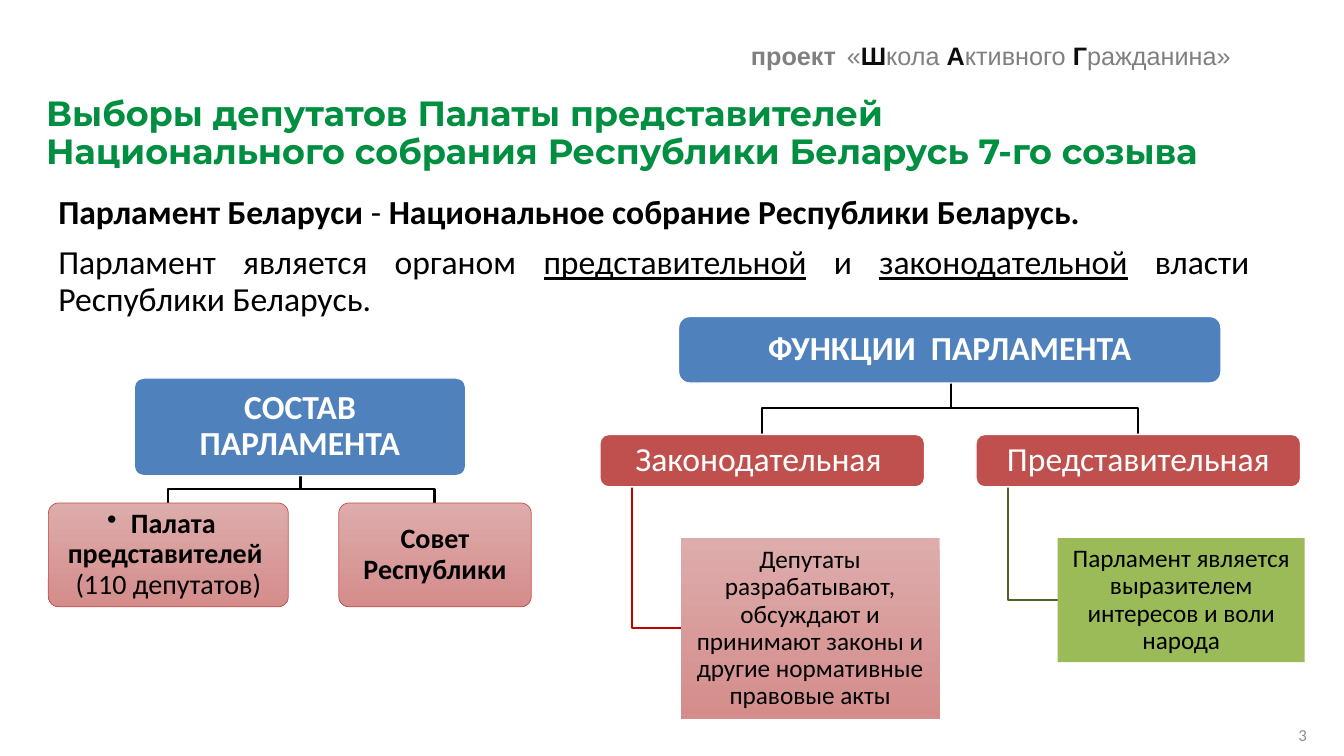
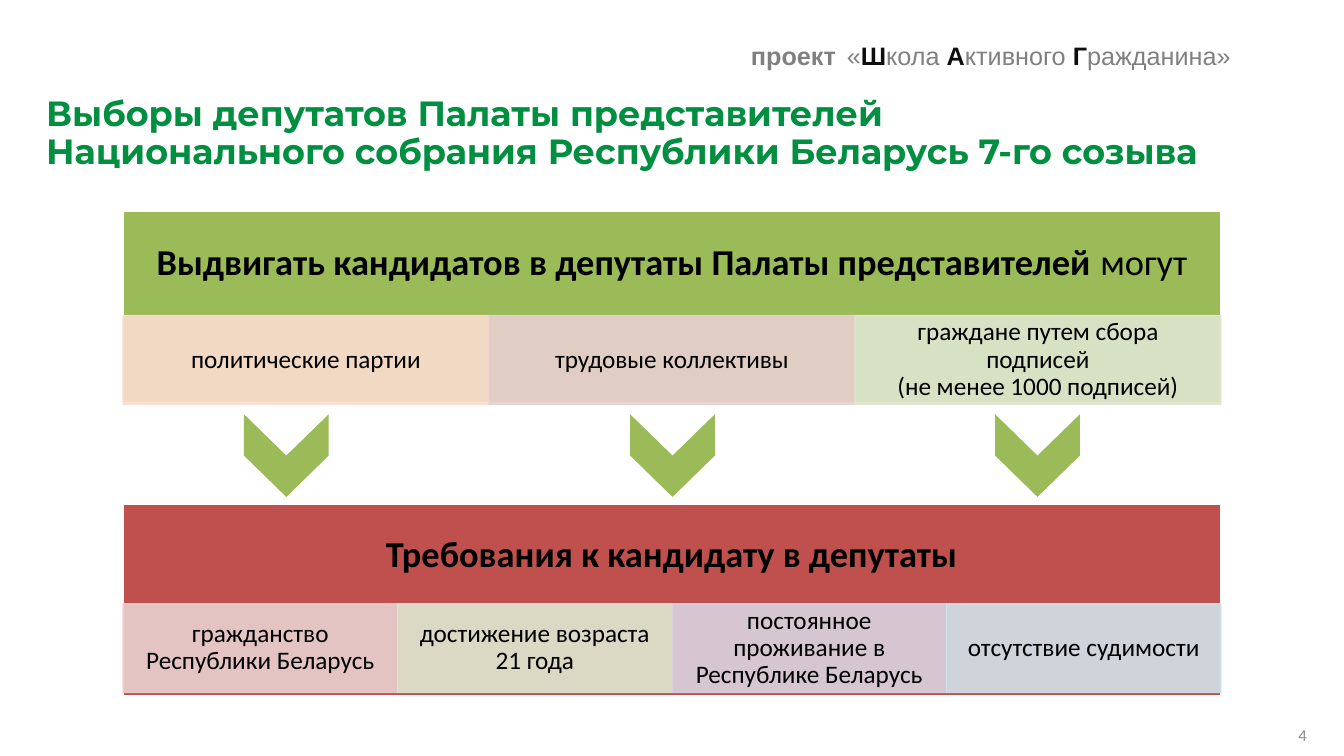
import lxml.etree
import pptx
import pptx.dml.color
import pptx.enum.shapes
import pptx.enum.text
import pptx.oxml.ns
import pptx.util

Inches = pptx.util.Inches
Pt = pptx.util.Pt
SHAPE = pptx.enum.shapes.MSO_SHAPE
ALIGN = pptx.enum.text.PP_ALIGN
ANCHOR = pptx.enum.text.MSO_ANCHOR
qualified = pptx.oxml.ns.qn

GREEN, RED, BLUE = "9BBB59", "C0504D", "4F81BD"
WHITE, BLACK, GREY, DARK = "FFFFFF", "000000", "808080", "0D0D0D"
PINK_GRADIENT = ("DDACAB", "D48D8B")
BOLD, PLAIN, UNDERLINED = {"bold": True}, {"bold": False}, {"underline": True}


def color(hex_text):
    return pptx.dml.color.RGBColor.from_string(hex_text)


def add_text(slide, text, box, kind=None, fill=None, line=None, line_width=1, corner=None,
             insets=(0.1, 0.05, 0.1, 0.05), anchor=ANCHOR.MIDDLE, align=ALIGN.CENTER,
             spacing=0.9, space_before=0, wrap=True, font="Calibri", size=18,
             ink=BLACK, bold=False):
    """Add a text box, or a shape of the given kind.

    Text is a string or a list of paragraphs, each a list of (text, overrides) runs.
    A fill of two colours is a gradient from top to bottom.
    """
    box = [Inches(length) for length in box]
    if kind is None:
        shape = slide.shapes.add_textbox(*box)
    else:
        shape = slide.shapes.add_shape(kind, *box)
        shape.shadow.inherit = False
        if isinstance(fill, tuple):
            shape.fill.gradient()
            shape.fill.gradient_angle = 270
            for stop, stop_color in zip(shape.fill.gradient_stops, fill):
                stop.color.rgb = color(stop_color)
        else:
            shape.fill.solid()
            shape.fill.fore_color.rgb = color(fill)
        if line:
            shape.line.color.rgb = color(line)
            shape.line.width = Pt(line_width)
        else:
            shape.line.fill.background()
        if corner is not None:
            shape.adjustments[0] = corner

    frame = shape.text_frame
    frame.word_wrap = wrap
    frame.vertical_anchor = anchor
    frame.margin_left, frame.margin_top, frame.margin_right, frame.margin_bottom = map(Inches, insets)
    paragraphs = [[(text, {})]] if isinstance(text, str) else text
    for number, runs in enumerate(paragraphs):
        paragraph = frame.add_paragraph() if number else frame.paragraphs[0]
        paragraph.alignment = align
        paragraph.line_spacing = spacing
        if number:
            paragraph.space_before = Pt(space_before)
        for run_text, overrides in runs:
            for part_number, part in enumerate(run_text.split("\n")):
                if part_number:
                    paragraph.add_line_break()
                if not part:
                    continue
                run = paragraph.add_run()
                run.text = part
                run.font.name = font
                run.font.size = Pt(overrides.get("size", size))
                run.font.bold = overrides.get("bold", bold)
                run.font.underline = overrides.get("underline")
                run.font.color.rgb = color(overrides.get("ink", ink))
    return shape


presentation = pptx.Presentation()
presentation.slide_width = Inches(13.33)
presentation.slide_height = Inches(7.5)

# Header, title and page number of every slide
capital = {"ink": DARK, "bold": True}
header = [[("проект", BOLD), (" ", {"size": 28, "bold": True}), ("«", {}),
           ("Ш", capital), ("кола ", {}), ("А", capital), ("ктивного ", {}),
           ("Г", capital), ("ражданина»", {})]]
title = ("Выборы депутатов Палаты представителей\n"
         "Национального собрания Республики Беларусь 7-го созыва")
slides = []
for page in (3, 4):
    slide = presentation.slides.add_slide(presentation.slide_layouts[6])
    add_text(slide, header, (7.35, 0.21, 5.01, 0.57), anchor=ANCHOR.TOP, align=ALIGN.LEFT,
             spacing=1, wrap=False, font="Arial", ink=GREY)
    add_text(slide, title, (0.36, 0.99, 12.62, 0.68), align=ALIGN.LEFT,
             font="Montserrat", size=25, ink="008E40", bold=True)
    add_text(slide, str(page), (10.71, 7.13, 2.35, 0.33), align=ALIGN.RIGHT,
             spacing=1, size=12, ink="8C8C8C")
    slides.append(slide)
parliament_slide, candidates_slide = slides

# Parliament: introduction
introduction = [
    [("Парламент Беларуси ", BOLD), ("- ", {}),
     ("Национальное собрание Республики Беларусь.", BOLD)],
    [("Парламент является органом ", {}), ("представительной", UNDERLINED), (" и ", {}),
     ("законодательной", UNDERLINED), (" власти Республики Беларусь.", {})],
]
shape = add_text(parliament_slide, introduction, (0.23, 1.89, 12.26, 1.33), anchor=ANCHOR.TOP,
                 align=ALIGN.JUSTIFY, space_before=10, size=24)
for paragraph in shape.text_frame.paragraphs:
    paragraph._p.get_or_add_pPr().set("marL", str(Inches(0.25)))

# Parliament: branches of both trees
branches = [
    (BLACK, [(2.98, 4.72), (2.98, 4.85), (1.67, 4.85), (1.67, 4.99)]),
    (BLACK, [(2.98, 4.72), (2.98, 4.85), (4.31, 4.85), (4.31, 4.99)]),
    (BLACK, [(9.43, 3.79), (9.43, 4.05), (7.56, 4.05), (7.56, 4.31)]),
    (BLACK, [(9.43, 3.79), (9.43, 4.05), (11.29, 4.05), (11.29, 4.31)]),
    ("C00000", [(6.27, 4.83), (6.27, 6.23), (6.75, 6.23)]),
    ("4F6228", [(10, 4.83), (10, 5.95), (10.49, 5.95)]),
]
for branch_color, points in branches:
    start, *rest = [(Inches(x), Inches(y)) for x, y in points]
    builder = parliament_slide.shapes.build_freeform(*start)
    builder.add_line_segments(rest, close=False)
    branch = builder.convert_to_shape()
    branch.shadow.inherit = False
    branch.fill.background()
    branch.line.color.rgb = color(branch_color)
    branch.line.width = Pt(1.5)

# Parliament: boxes of both trees
root = {"kind": SHAPE.ROUNDED_RECTANGLE, "fill": BLUE, "line": WHITE,
        "size": 24, "ink": WHITE, "bold": True}
chamber = {"kind": SHAPE.ROUNDED_RECTANGLE, "fill": PINK_GRADIENT, "line": RED,
           "line_width": 0.5, "corner": 0.1, "insets": (0.08,) * 4, "size": 20, "bold": True}
function = {**root, "fill": RED, "bold": False, "insets": (0.02,) * 4}
detail = {"kind": SHAPE.RECTANGLE, "insets": (0.01,) * 4}

add_text(parliament_slide, "СОСТАВ ПАРЛАМЕНТА", (1.33, 3.75, 3.29, 0.97),
         corner=0.1, insets=(0.1,) * 4, **root)
shape = add_text(parliament_slide,
                 [[("Палата представителей \n", {}), ("(110 депутатов)", PLAIN)]],
                 (0.48, 4.99, 2.38, 1.03), **chamber)
properties = shape.text_frame.paragraphs[0]._p.get_or_add_pPr()
lxml.etree.SubElement(properties, qualified("a:buChar")).set("char", "•")
add_text(parliament_slide, "Совет Республики", (3.36, 4.99, 1.91, 1.03), **chamber)

add_text(parliament_slide, "ФУНКЦИИ\u00a0 ПАРЛАМЕНТА".replace("\u00a0", " "),
         (6.73, 3.14, 5.38, 0.66), insets=(0.02,) * 4, **root)
for left, name in ((5.95, "Законодательная "), (9.68, "Представительная")):
    add_text(parliament_slide, name, (left, 4.31, 3.22, 0.52), **function)
add_text(parliament_slide,
         "Депутаты разрабатывают, обсуждают и принимают законы и другие нормативные правовые акты",
         (6.75, 5.34, 2.57, 1.79), fill=PINK_GRADIENT, **detail)
add_text(parliament_slide, "Парламент является выразителем интересов и воли народа",
         (10.49, 5.34, 2.45, 1.23), fill=GREEN, **detail)

# Candidates: two bands, each with a row of cells
band_left, band_width, band_height, heading_height = 1.22, 10.89, 1.9, 1.03
bands = [
    (2.1, 3.13, GREEN,
     [("Выдвигать кандидатов в депутаты Палаты представителей ", BOLD), ("могут", {})],
     [("политические партии", "FCDDCF"), ("трудовые коллективы", "E8D0D0"),
      ("граждане путем сбора подписей\n(не менее 1000 подписей)", "DEE7D1")]),
    (5, 5.99, RED,
     [("Требования к кандидату в депутаты", BOLD)],
     [("гражданство Республики Беларусь", "E8D0D0"), ("достижение возраста 21 года", "DEE7D1"),
      ("постоянное проживание в Республике Беларусь", "D8D3E0"),
      ("отсутствие судимости", "D0E3EA")]),
]
for top, cells_top, band_color, heading, cells in bands:
    add_text(candidates_slide, [heading], (band_left, top, band_width, band_height),
             kind=SHAPE.RECTANGLE, fill=band_color, line=WHITE, size=26,
             insets=(0.2, 0.2, 0.2, 0.2 + band_height - heading_height))
    cell_width = band_width / len(cells)
    for column, (text, cell_color) in enumerate(cells):
        cell = add_text(candidates_slide, text,
                        (band_left + column * cell_width, cells_top, cell_width, 0.88),
                        kind=SHAPE.RECTANGLE, fill=cell_color, line=cell_color,
                        insets=(0.14, 0.03, 0.14, 0.03))
        for tint in cell._element.spPr.iter(qualified("a:srgbClr")):
            lxml.etree.SubElement(tint, qualified("a:alpha")).set("val", "90000")

for left in (2.43, 6.26, 9.88):
    chevron = candidates_slide.shapes.add_shape(
        SHAPE.CHEVRON, Inches(left), Inches(4.1), Inches(0.82), Inches(0.84))
    chevron.rotation = 90
    chevron.shadow.inherit = False
    chevron.fill.solid()
    chevron.fill.fore_color.rgb = color(GREEN)
    chevron.line.fill.background()

presentation.save("out.pptx")
